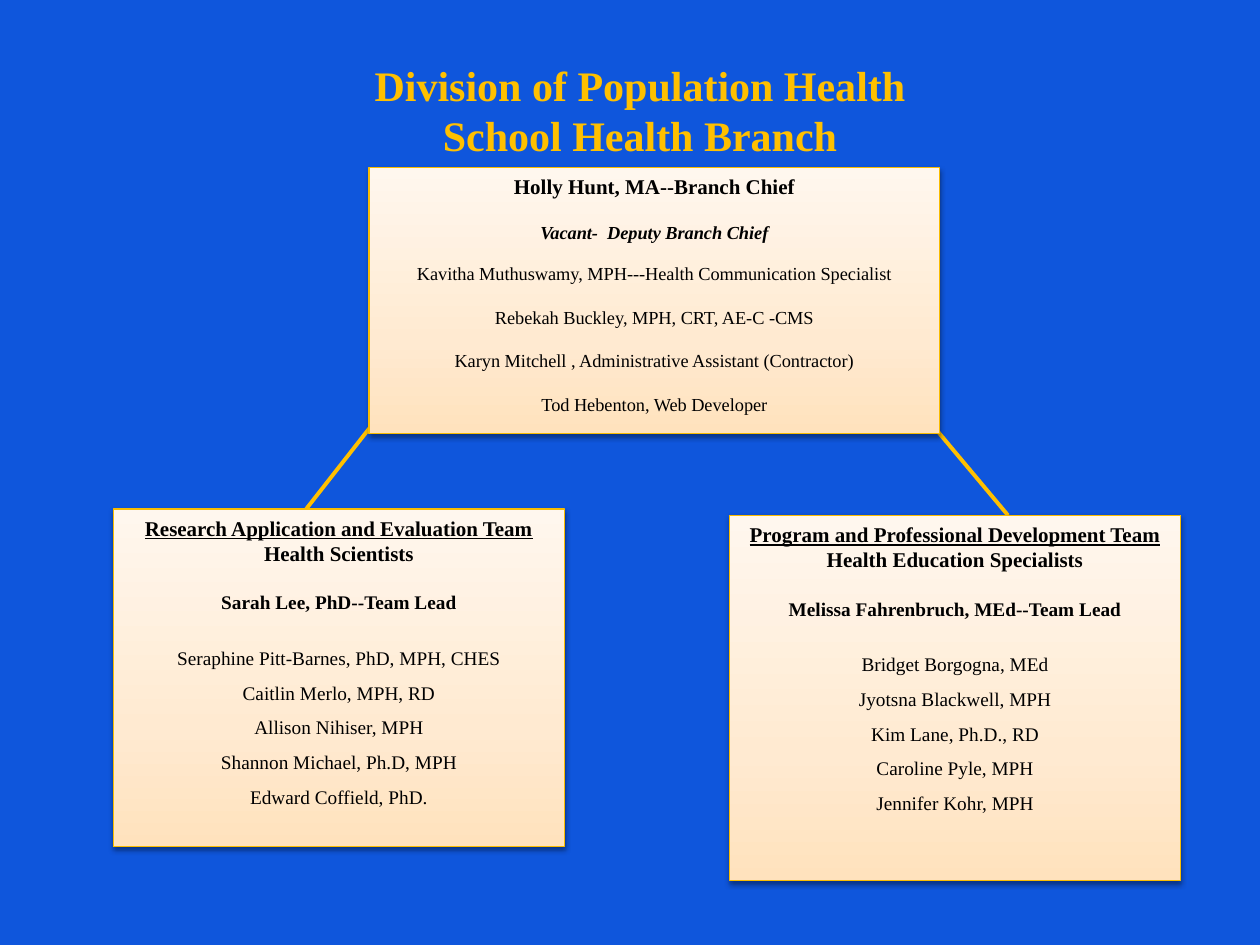
import copy

import pptx
import pptx.dml.color
import pptx.enum.shapes
import pptx.enum.text
import pptx.oxml
import pptx.oxml.ns
import pptx.util
from pptx.util import Inches

GOLD = "FFC000"
SHADOW = (
    '<a:outerShdw xmlns:a="http://schemas.openxmlformats.org/drawingml/2006/main"'
    ' blurRad="39400" dist="20300" dir="5400000" rotWithShape="0">'
    '<a:srgbClr val="000000"><a:alpha val="38000"/></a:srgbClr></a:outerShdw>'
)


def color(hex_value):
    return pptx.dml.color.RGBColor.from_string(hex_value)


class OrgChart:
    font_name = "Times New Roman"
    box_gradient = [("FFE2BD", 0), ("FFEAD1", 0.35), ("FFF7EE", 1)]

    def __init__(self, slide, background):
        self.slide = slide
        slide.background.fill.solid()
        slide.background.fill.fore_color.rgb = color(background)

    def format_paragraph(self, paragraph, text, hex_value="000000",
                         before=0, spacing=None, **font_values):
        paragraph.text = text
        paragraph.alignment = pptx.enum.text.PP_ALIGN.CENTER
        paragraph.space_before = pptx.util.Pt(before)
        paragraph.line_spacing = spacing
        values = {"name": self.font_name, **font_values}
        values["size"] = pptx.util.Pt(values["size"])
        for run in paragraph.runs:
            for name, value in values.items():
                setattr(run.font, name, value)
            run.font.color.rgb = color(hex_value)

    def title(self, text, left, top, width, height):
        title = self.slide.shapes.title
        title.left, title.top = Inches(left), Inches(top)
        title.width, title.height = Inches(width), Inches(height)
        frame = title.text_frame
        frame.auto_size = pptx.enum.text.MSO_AUTO_SIZE.NONE
        frame.vertical_anchor = pptx.enum.text.MSO_ANCHOR.TOP
        self.format_paragraph(frame.paragraphs[0], text, GOLD, size=24, bold=True)

    def link(self, start, end):
        connector = self.slide.shapes.add_connector(
            pptx.enum.shapes.MSO_CONNECTOR.STRAIGHT,
            *(Inches(value) for value in start + end))
        connector.line.color.rgb = color(GOLD)
        connector.line.width = pptx.util.Pt(2.25)
        properties = connector._element.spPr
        properties.append(pptx.oxml.parse_xml(
            f'<a:effectLst {pptx.oxml.ns.nsdecls("a")}/>'))

    def box(self, left, top, width, height, lines):
        """Draw a shaded box; lines are (text, format values) pairs."""
        box = self.slide.shapes.add_shape(
            pptx.enum.shapes.MSO_SHAPE.RECTANGLE,
            Inches(left), Inches(top), Inches(width), Inches(height))
        box.fill.gradient()
        box.fill.gradient_angle = 90
        stop_list = box._element.spPr.find(".//" + pptx.oxml.ns.qn("a:gsLst"))
        stop_list.append(copy.deepcopy(stop_list[0]))
        for stop, (hex_value, position) in zip(box.fill.gradient_stops, self.box_gradient):
            stop.color.rgb = color(hex_value)
            stop.position = position
        box.line.color.rgb = color("F9BC00")
        box.line.width = pptx.util.Pt(0.75)
        box.shadow.inherit = False
        effects = box._element.spPr.find(pptx.oxml.ns.qn("a:effectLst"))
        effects.append(pptx.oxml.parse_xml(SHADOW))
        frame = box.text_frame
        frame.word_wrap = True
        frame.vertical_anchor = pptx.enum.text.MSO_ANCHOR.TOP
        for index, (text, values) in enumerate(lines):
            paragraph = frame.add_paragraph() if index else frame.paragraphs[0]
            self.format_paragraph(paragraph, text, **values)

    def team(self, left, top, height, name, role, lead, members):
        heading = {"size": 12, "bold": True}
        member = {"size": 11, "spacing": 1.5}
        lines = [
            (name, {**heading, "underline": True}),
            (role, heading),
            (lead, {"size": 11, "bold": True, "before": 14.3}),
            (members[0], {**member, "before": 12}),
        ]
        lines += [(person, member) for person in members[1:]]
        self.box(left, top, 3.58, height, lines)


def main():
    deck = pptx.Presentation()
    deck.slide_width, deck.slide_height = Inches(10), Inches(7.5)
    chart = OrgChart(deck.slides.add_slide(deck.slide_layouts[5]), "0F56DC")

    chart.title("Division of Population Health\vSchool Health Branch", 0.58, 0.42, 9, 0.57)
    chart.link((3.44, 2.75), (2.43, 4.04))
    chart.link((6.92, 2.8), (8, 4.09))

    staff = {"size": 10.5, "before": 12.5}
    chart.box(2.93, 1.33, 4.53, 2.11, [
        ("Holly Hunt, MA--Branch Chief", {"size": 12, "bold": True}),
        ("Vacant-  Deputy Branch Chief", {**staff, "bold": True, "italic": True}),
        ("Kavitha Muthuswamy, MPH---Health Communication Specialist",
         {**staff, "before": 10.8}),
        ("Rebekah Buckley, MPH, CRT, AE-C -CMS", staff),
        ("Karyn Mitchell , Administrative Assistant (Contractor)", staff),
        ("Tod Hebenton, Web Developer", staff),
    ])
    chart.team(5.79, 4.09, 2.9, "Program and Professional Development Team",
               "Health Education Specialists", "Melissa Fahrenbruch, MEd--Team Lead",
               ["Bridget Borgogna, MEd", "Jyotsna Blackwell, MPH", "Kim Lane, Ph.D., RD",
                "Caroline Pyle, MPH", "Jennifer Kohr, MPH"])
    chart.team(0.9, 4.04, 2.68, "Research Application and Evaluation Team",
               "Health Scientists", "Sarah Lee, PhD--Team Lead",
               ["Seraphine Pitt-Barnes, PhD, MPH, CHES", "Caitlin Merlo, MPH, RD",
                "Allison Nihiser, MPH", "Shannon Michael, Ph.D, MPH",
                "Edward Coffield, PhD."])
    deck.save("out.pptx")


if __name__ == "__main__":
    main()
